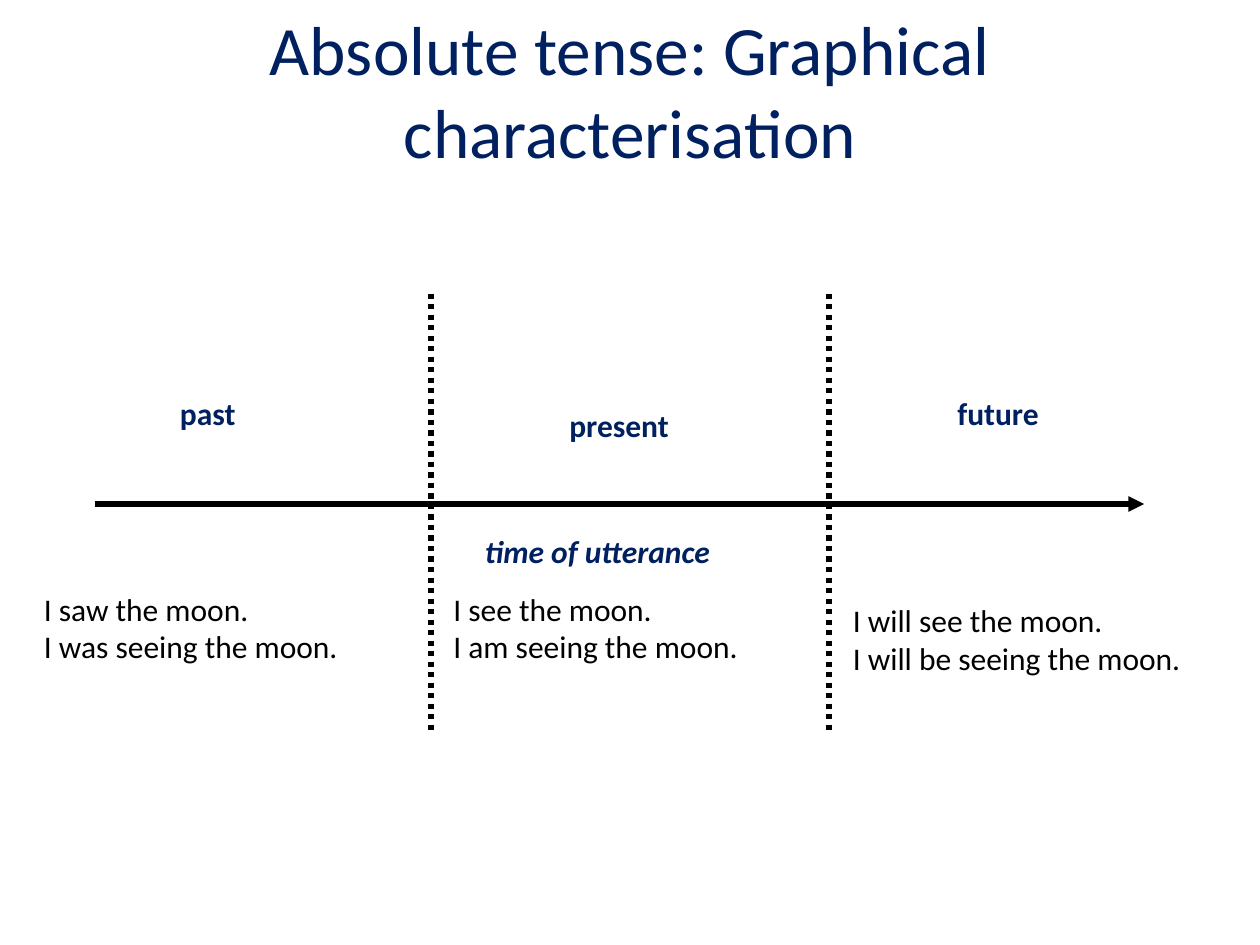
from lxml import etree
from pptx import Presentation
from pptx import util as u
from pptx.dml.color import RGBColor
from pptx.enum import dml, shapes, text
from pptx.oxml import ns

NAVY, BLACK = "002060", "000000"

deck = Presentation()
deck.slide_width, deck.slide_height = u.Inches(10), u.Inches(7.5)
slide = deck.slides.add_slide(deck.slide_layouts[6])


def add_text(box, lines, size=18, color=BLACK, bold=False, italic=False):
    area = slide.shapes.add_textbox(*map(u.Inches, box))
    frame = area.text_frame
    frame.word_wrap = False
    frame.auto_size = text.MSO_AUTO_SIZE.SHAPE_TO_FIT_TEXT
    for i, line in enumerate(lines):
        paragraph = frame.add_paragraph() if i else frame.paragraphs[0]
        run = paragraph.add_run()
        run.text = line
        run.font.name = "Calibri"
        run.font.size = u.Pt(size)
        run.font.bold, run.font.italic = bold, italic
        run.font.color.rgb = RGBColor.from_string(color)
    return frame


def add_line(x1, y1, x2, y2):
    line = slide.shapes.add_connector(
        shapes.MSO_CONNECTOR.STRAIGHT, *map(u.Inches, (x1, y1, x2, y2)))
    line.line.color.rgb = RGBColor.from_string(BLACK)
    line.line.width = u.Pt(3)
    etree.SubElement(line._element.spPr, ns.qn("a:effectLst"))
    return line


# Title
title = add_text((0.5, 0.08, 9, 1.25),
                 ["Absolute tense: Graphical characterisation"], 39.6, NAVY)
title.word_wrap = True
title.auto_size = text.MSO_AUTO_SIZE.NONE
title.vertical_anchor = text.MSO_ANCHOR.MIDDLE
title.paragraphs[0].alignment = text.PP_ALIGN.CENTER

# Time axis with its arrowhead
time_axis = add_line(0.75, 4, 9.08, 4)
etree.SubElement(time_axis.line._get_or_add_ln(), ns.qn("a:tailEnd"), type="triangle")
add_text((3.75, 4.17, 2.02, 0.4), ["time of utterance"],
         color=NAVY, bold=True, italic=True)

# Dotted borders between the tenses
for x in (3.42, 6.58):
    add_line(x, 2.33, x, 5.83).line.dash_style = dml.MSO_LINE.ROUND_DOT

# Tense names above the axis, example sentences below it
tenses = [
    ("past", (1.33, 3.08, 0.65, 0.4), (0.25, 4.63, 3.16, 0.7),
     ["I saw the moon.", "I was seeing the moon."]),
    ("present", (4.42, 3.17, 1, 0.4), (3.5, 4.63, 3.07, 0.7),
     ["I see the moon.", "I am seeing the moon."]),
    ("future", (7.5, 3.08, 0.85, 0.4), (6.67, 4.72, 3.48, 0.7),
     ["I will see the moon.", "I will be seeing the moon."]),
]
for tense, name_box, example_box, examples in tenses:
    add_text(name_box, [tense], color=NAVY, bold=True)
    add_text(example_box, examples)

deck.save("out.pptx")
